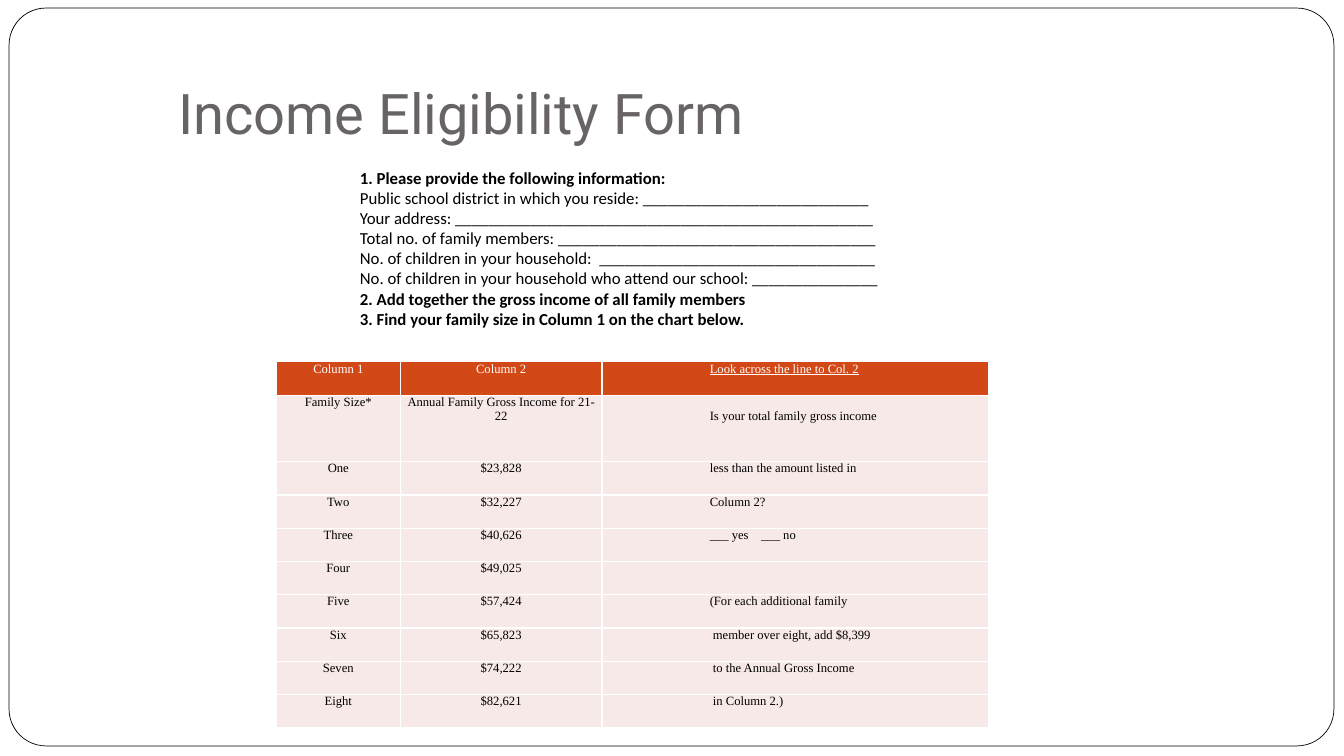
import dataclasses
import typing

import pptx
import pptx.dml.color
import pptx.enum.shapes
import pptx.enum.text
import pptx.oxml
import pptx.oxml.ns
import pptx.util

Inches = pptx.util.Inches
Pt = pptx.util.Pt
RGBColor = pptx.dml.color.RGBColor
Align = pptx.enum.text.PP_ALIGN
Anchor = pptx.enum.text.MSO_ANCHOR

BLACK = RGBColor(0x00, 0x00, 0x00)
WHITE = RGBColor(0xFF, 0xFF, 0xFF)
GRAY = RGBColor(0x69, 0x64, 0x64)
ORANGE = RGBColor(0xD3, 0x48, 0x17)
PINK = RGBColor(0xF7, 0xE9, 0xE8)


@dataclasses.dataclass
class Line:
    text: str
    bold: bool = False


@dataclasses.dataclass
class Row:
    size: str
    income: str
    note: str
    height: float = 0.33
    drop: float = 0


LINES = [
    Line("1. Please provide the following information:", True),
    Line("Public school district in which you reside: " + "_" * 27),
    Line("Your address: " + "_" * 50),
    Line("Total no. of family members: " + "_" * 38),
    Line("No. of children in your household:  " + "_" * 33),
    Line("No. of children in your household who attend our school: " + "_" * 15),
    Line("2. Add together the gross income of all family members", True),
    Line("3. Find your family size in Column 1 on the chart below.", True),
]

ROWS = [
    Row("Column 1", "Column 2", "Look across the line to Col. 2"),
    Row("Family Size*", "Annual Family Gross Income for 21-22",
        "Is your total family gross income", 0.66, 0.14),
    Row("One", "$23,828", "less than the amount listed in"),
    Row("Two", "$32,227", "Column 2?"),
    Row("Three", "$40,626", "___ yes\t___ no"),
    Row("Four", "$49,025", ""),
    Row("Five", "$57,424", "(For each additional family"),
    Row("Six", "$65,823", " member over eight, add $8,399"),
    Row("Seven", "$74,222", " to the Annual Gross Income"),
    Row("Eight", "$82,621", " in Column 2.)"),
]
WIDTHS = [1.23, 2, 3.84]


def assign(item: typing.Any, values: dict[str, typing.Any]) -> None:
    for name, value in values.items():
        setattr(item, name, value)


def write(par: typing.Any, text: str, color: RGBColor, form: dict[str, typing.Any]) -> None:
    run = par.add_run()
    run.text = text
    assign(run.font, form)
    run.font.color.rgb = color


def add_frame(slide: typing.Any) -> None:
    frame = slide.shapes.add_shape(
        pptx.enum.shapes.MSO_SHAPE.ROUNDED_RECTANGLE,
        Inches(0.09), Inches(0.08), Inches(13.14), Inches(7.32))
    frame.adjustments[0] = 0.05
    frame.shadow.inherit = False
    frame.fill.solid()
    frame.fill.fore_color.rgb = WHITE
    frame.line.color.rgb = BLACK
    frame.line.width = Pt(0.5)
    slide.shapes.element.insert(2, frame.element)


def add_title(slide: typing.Any) -> None:
    title = slide.shapes.title
    assign(title, {"left": Inches(1.67), "top": Inches(0.3),
                   "width": Inches(9), "height": Inches(1.25)})
    assign(title.text_frame, {
        "vertical_anchor": Anchor.BOTTOM, "word_wrap": True,
        "auto_size": pptx.enum.text.MSO_AUTO_SIZE.NONE,
        "margin_left": Inches(0.1), "margin_right": Inches(0.1),
        "margin_top": Inches(0.05), "margin_bottom": Inches(0.1)})
    par = title.text_frame.paragraphs[0]
    par.alignment = Align.LEFT
    write(par, "Income Eligibility Form", GRAY, {"name": "Roboto", "size": Pt(40)})


def add_lines(slide: typing.Any) -> None:
    box = slide.shapes.add_textbox(Inches(3.57), Inches(1.66), Inches(5.2), Inches(1.82))
    body = box.text_frame
    assign(body, {"word_wrap": True, "vertical_anchor": Anchor.TOP,
                  "margin_left": 0, "margin_right": 0,
                  "margin_top": 0, "margin_bottom": 0})
    for num, line in enumerate(LINES):
        par = body.add_paragraph() if num else body.paragraphs[0]
        write(par, line.text, BLACK,
              {"name": "Calibri", "size": Pt(12), "bold": line.bold})


def add_edges(cell: typing.Any) -> None:
    props = cell._tc.get_or_add_tcPr()
    for side in "LRTB":
        props.append(pptx.oxml.parse_xml(
            f'<a:ln{side} {pptx.oxml.ns.nsdecls("a")} w="{Pt(1)}">'
            f'<a:solidFill><a:srgbClr val="{WHITE}"/></a:solidFill></a:ln{side}>'))


def add_tab(par: typing.Any, place: float) -> None:
    par._p.get_or_add_pPr().append(pptx.oxml.parse_xml(
        f'<a:tabLst {pptx.oxml.ns.nsdecls("a")}>'
        f'<a:tab pos="{Inches(place)}" algn="l"/></a:tabLst>'))


def fill_cell(cell: typing.Any, text: str, head: bool, note: bool, drop: float) -> None:
    add_edges(cell)
    cell.fill.solid()
    cell.fill.fore_color.rgb = ORANGE if head else PINK
    assign(cell, {"margin_left": Inches(1.07 if note else 0.07),
                  "margin_right": Inches(0.07),
                  "margin_top": Inches(drop), "margin_bottom": 0,
                  "vertical_anchor": Anchor.TOP})
    par = cell.text_frame.paragraphs[0]
    par.alignment = Align.LEFT if note else Align.CENTER
    if "\t" in text:
        add_tab(par, 0.51)
    if text:
        write(par, text, WHITE if head else BLACK,
              {"name": "Times New Roman", "size": Pt(9), "bold": False,
               "underline": head and note})


def add_chart(slide: typing.Any) -> None:
    table = slide.shapes.add_table(
        len(ROWS), len(WIDTHS), Inches(2.74), Inches(3.59),
        Inches(sum(WIDTHS)), Inches(sum(row.height for row in ROWS))).table
    for col, width in zip(table.columns, WIDTHS):
        col.width = Inches(width)
    for num, row in enumerate(ROWS):
        table.rows[num].height = Inches(row.height)
        for col, text in enumerate((row.size, row.income, row.note)):
            note = col == 2
            fill_cell(table.cell(num, col), text, num == 0, note, row.drop if note else 0)


def main() -> None:
    deck = pptx.Presentation()
    assign(deck, {"slide_width": Inches(13.33), "slide_height": Inches(7.5)})
    slide = deck.slides.add_slide(deck.slide_layouts[5])
    add_frame(slide)
    add_chart(slide)
    add_lines(slide)
    add_title(slide)
    deck.save("out.pptx")


if __name__ == "__main__":
    main()
